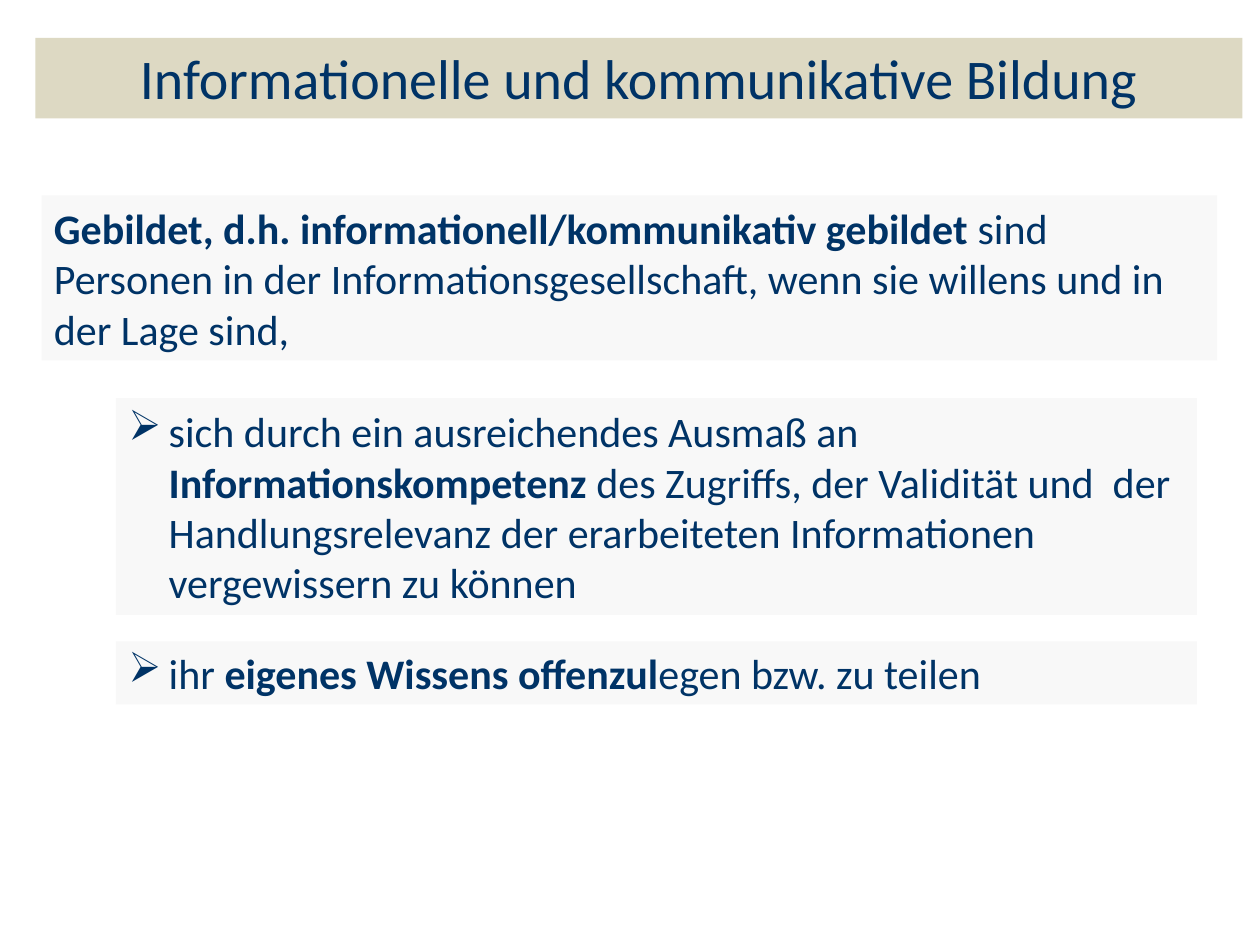
"""Build a slide on informational and communicative education."""
import lxml.etree
import pptx
import pptx.dml.color
import pptx.enum.shapes
import pptx.enum.text
import pptx.oxml.ns
import pptx.util
from pptx.util import Inches

FONT = "Calibri"
NAVY, SAND, PALE = "003366", "DDD9C3", "F8F8F8"
BULLET, INDENT = "➢", 0.32

TITLE = [("Informationelle und kommunikative Bildung", False)]
INTRO = [
    ("Gebildet, d.h. informationell/kommunikativ gebildet ", True),
    ("sind Personen in der Informationsgesellschaft, wenn sie willens "
     "und in der Lage sind,", False),
]
POINTS = [
    (3.16, 1.72, [
        ("sich durch ein ausreichendes Ausmaß an ", False),
        ("Informationskompetenz", True),
        (" des Zugriffs, der Validität und  der Handlungsrelevanz der "
         "erarbeiteten Informationen vergewissern zu können", False),
    ]),
    (5.09, 0.5, [
        ("ihr ", False),
        ("eigenes Wissens offenzul", True),
        ("egen bzw. zu teilen", False),
    ]),
]


def color(value):
    return pptx.dml.color.RGBColor.from_string(value)


def add_panel(page, place, spans, fill=PALE, size=24):
    box = page.shapes.add_shape(
        pptx.enum.shapes.MSO_SHAPE.RECTANGLE, *map(Inches, place))
    box.shadow.inherit = False
    box.fill.solid()
    box.fill.fore_color.rgb = color(fill)
    box.line.fill.background()
    frame = box.text_frame
    frame.word_wrap = True
    frame.auto_size = pptx.enum.text.MSO_AUTO_SIZE.SHAPE_TO_FIT_TEXT
    frame.vertical_anchor = pptx.enum.text.MSO_ANCHOR.MIDDLE
    para = frame.paragraphs[0]
    para.alignment = pptx.enum.text.PP_ALIGN.LEFT
    for text, bold in spans:
        span = para.add_run()
        span.text = text
        span.font.name = FONT
        span.font.size = pptx.util.Pt(size)
        span.font.bold = bold
        span.font.color.rgb = color(NAVY)
    return box


def add_bullet(para):
    properties = para._p.get_or_add_pPr()
    properties.set("marL", str(Inches(INDENT)))
    properties.set("indent", str(-Inches(INDENT)))
    mark = lxml.etree.SubElement(properties, pptx.oxml.ns.qn("a:buChar"))
    mark.set("char", BULLET)


def main():
    deck = pptx.Presentation()
    deck.slide_width, deck.slide_height = Inches(10), Inches(7.5)
    page = deck.slides.add_slide(deck.slide_layouts[6])

    add_panel(page, (0.33, 1.55, 9.33, 1.31), INTRO)
    title = add_panel(page, (0.28, 0.3, 9.58, 0.64), TITLE, SAND, 32)
    title.text_frame.vertical_anchor = pptx.enum.text.MSO_ANCHOR.TOP
    title.text_frame.paragraphs[0].alignment = pptx.enum.text.PP_ALIGN.CENTER
    for top, height, spans in POINTS:
        box = add_panel(page, (0.92, top, 8.58, height), spans)
        add_bullet(box.text_frame.paragraphs[0])

    deck.save("out.pptx")


if __name__ == "__main__":
    main()
